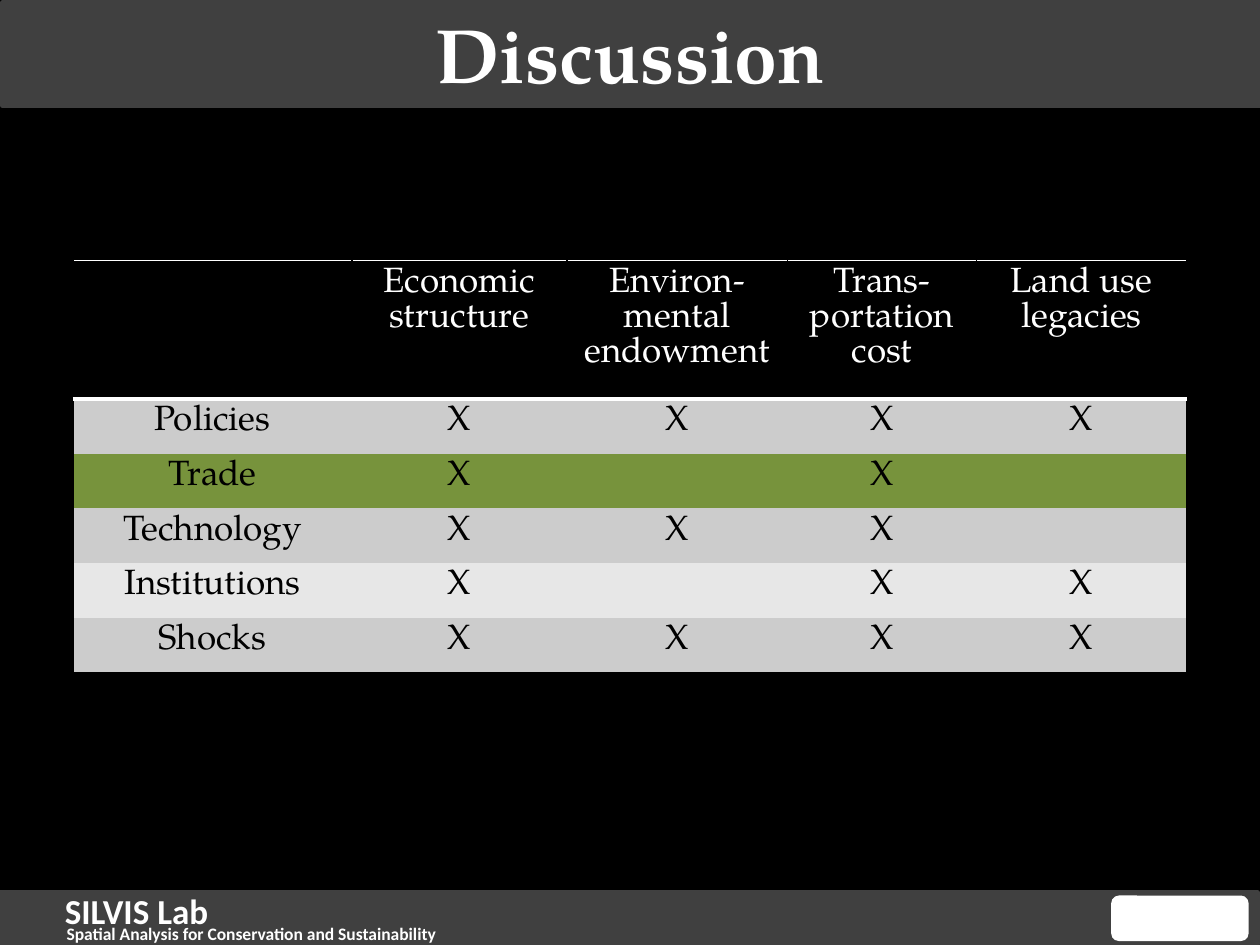
from dataclasses import dataclass

from lxml.etree import SubElement
from pptx import Presentation
from pptx.dml.color import RGBColor
from pptx.enum.shapes import MSO_SHAPE
from pptx.enum.text import MSO_ANCHOR, PP_ALIGN
from pptx.oxml.ns import qn
from pptx.util import Pt


@dataclass(frozen=True)
class Theme:
    black: str = "000000"
    white: str = "FFFFFF"
    bar: str = "404040"
    band: str = "CCCCCC"
    light_band: str = "E7E7E7"
    highlight: str = "77933C"
    serif: str = "TeX Gyre Pagella"
    sans: str = "Calibri"
    title_size: int = 44
    body_size: int = 20
    tagline_size: int = 10


class SlideBuilder:
    def __init__(self, slide, theme):
        self.slide = slide
        self.theme = theme

    def background(self, color):
        fill = self.slide.background.fill
        fill.solid()
        fill.fore_color.rgb = RGBColor.from_string(color)

    def box(self, kind, bounds, color, line_width=0):
        shape = self.slide.shapes.add_shape(kind, *map(Pt, bounds))
        shape.shadow.inherit = False
        shape.fill.solid()
        shape.fill.fore_color.rgb = RGBColor.from_string(color)
        if line_width:
            shape.line.color.rgb = RGBColor.from_string(color)
            shape.line.width = Pt(line_width)
        else:
            shape.line.fill.background()

    def add_words(self, text_frame, text, color, align=PP_ALIGN.LEFT, **font_format):
        paragraph = text_frame.paragraphs[0]
        paragraph.alignment = align
        run = paragraph.add_run()
        run.text = text
        run.font.color.rgb = RGBColor.from_string(color)
        for name, value in font_format.items():
            setattr(run.font, name, value)

    def text(self, bounds, text, size, font, align=PP_ALIGN.LEFT, anchor=MSO_ANCHOR.TOP):
        text_frame = self.slide.shapes.add_textbox(*map(Pt, bounds)).text_frame
        text_frame.word_wrap = True
        text_frame.vertical_anchor = anchor
        self.add_words(text_frame, text, self.theme.white, align,
                       size=Pt(size), name=font, bold=True)

    def borders(self, cell, sides):
        """Draw the given sides as (color, width) and clear the others."""
        properties = cell._tc.get_or_add_tcPr()
        for side in "LRTB":
            line = SubElement(properties, qn(f"a:ln{side}"))
            if side in sides:
                color, width = sides[side]
                line.set("w", str(Pt(width)))
                fill = SubElement(line, qn("a:solidFill"))
                SubElement(fill, qn("a:srgbClr")).set("val", color)
            else:
                SubElement(line, qn("a:noFill"))

    def table(self, left, top, widths, heights, rows, fills):
        theme = self.theme
        frame = self.slide.shapes.add_table(
            len(rows), len(widths), Pt(left), Pt(top), Pt(sum(widths)), Pt(sum(heights)))
        table = frame.table
        table.first_row = table.horz_banding = False
        for column, width in zip(table.columns, widths):
            column.width = Pt(width)
        for row, height in zip(table.rows, heights):
            row.height = Pt(height)

        edge, rule = (theme.black, 1), (theme.white, 3)
        last = len(widths) - 1
        for r, (texts, fill) in enumerate(zip(rows, fills)):
            for c, text in enumerate(texts):
                cell = table.cell(r, c)
                if r == 0:
                    sides = {"L": edge, "R": edge, "T": (theme.white, 1), "B": rule}
                else:
                    sides = {"T": rule} if r == 1 else {}
                    if c == 0:
                        sides["L"] = edge
                    if c == last:
                        sides["R"] = edge
                self.borders(cell, sides)
                cell.fill.solid()
                cell.fill.fore_color.rgb = RGBColor.from_string(fill)
                if text:
                    color = theme.white if r == 0 else theme.black
                    self.add_words(cell.text_frame, text, color, PP_ALIGN.CENTER,
                                   size=Pt(theme.body_size), name=theme.serif)


def main():
    theme = Theme()
    presentation = Presentation()
    presentation.slide_width, presentation.slide_height = Pt(720), Pt(540)
    slide = presentation.slides.add_slide(presentation.slide_layouts[6])
    builder = SlideBuilder(slide, theme)
    builder.background(theme.black)

    # Header and footer bars
    builder.box(MSO_SHAPE.RECTANGLE, (1.5, 1.5, 718.5, 59), theme.bar, 3)
    builder.box(MSO_SHAPE.RECTANGLE, (0, 510, 718.5, 29.5), theme.bar, 3)

    # Footer texts and badge
    builder.text((30, 505, 175, 31.5), "SILVIS Lab", theme.body_size, theme.sans)
    builder.text((31, 524, 354, 12), "Spatial Analysis for Conservation and Sustainability",
                 theme.tagline_size, theme.sans)
    builder.box(MSO_SHAPE.ROUNDED_RECTANGLE, (635, 511.75, 78.5, 26), theme.white)

    # Title
    builder.text((0.5, 0, 719.5, 60), "Discussion", theme.title_size, theme.serif,
                 PP_ALIGN.CENTER, MSO_ANCHOR.MIDDLE)

    # Factors by driver, one mark for each link
    headings = ["", "Economic structure", "Environ-mental endowment",
                "Trans-portation cost", "Land use legacies"]
    drivers = [
        ("Policies", "XXXX", theme.band),
        ("Trade", "X X ", theme.highlight),
        ("Technology", "XXX ", theme.band),
        ("Institutions", "X XX", theme.light_band),
        ("Shocks", "XXXX", theme.band),
    ]
    rows = [headings] + [[name, *(mark.strip() for mark in marks)]
                         for name, marks, _ in drivers]
    fills = [theme.black] + [fill for _, _, fill in drivers]
    builder.table(42, 148.75, [159, 123, 126, 108, 120],
                  [67.5] + [29.2] * 4 + [27.2], rows, fills)

    presentation.save("out.pptx")


if __name__ == "__main__":
    main()
